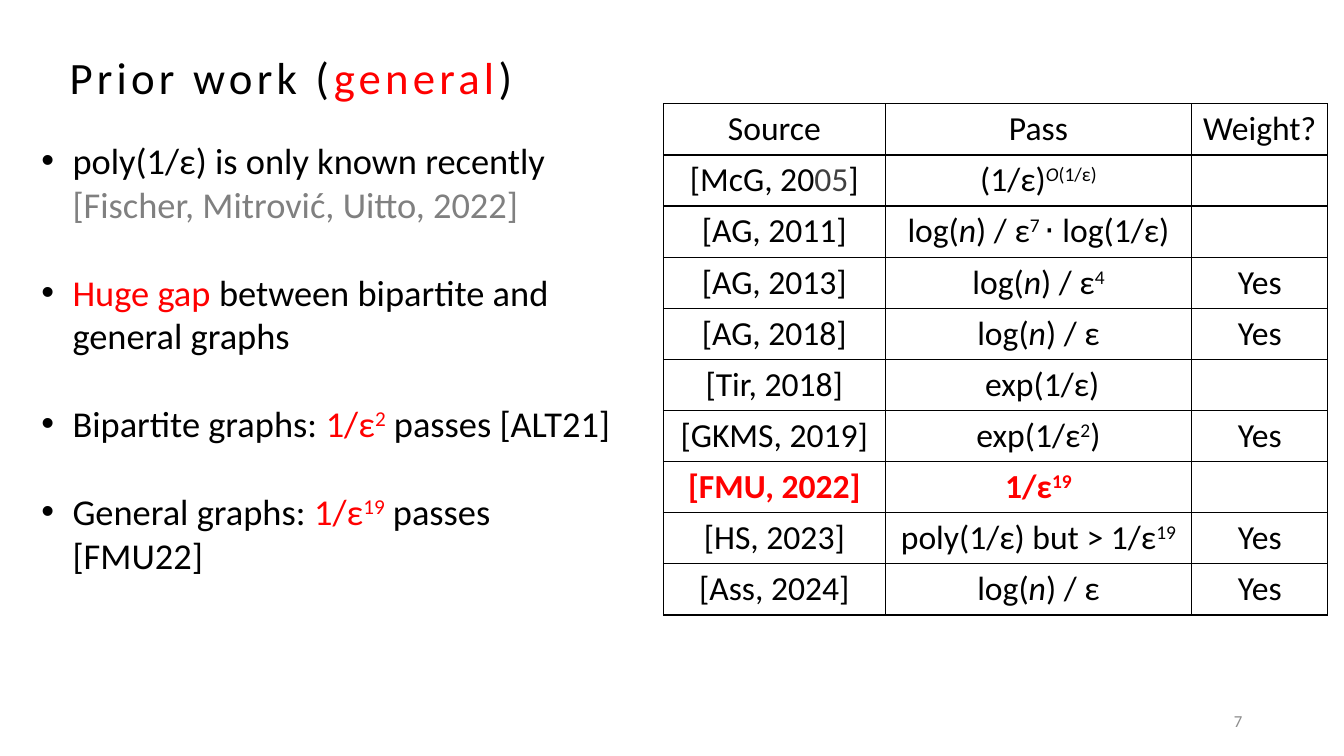
from pptx import Presentation
from pptx.dml.color import RGBColor as Color
from pptx.enum.text import MSO_ANCHOR as Anchor, MSO_AUTO_SIZE as Fit, PP_ALIGN as Align
from pptx.oxml import parse_xml
from pptx.oxml.ns import nsdecls
from pptx.util import Inches, Pt

THEME = {
    "font": "Calibri",
    "black": "000000", "red": "FF0000", "grey": "808080",
    "dark": "404040", "pale": "8C8C8C", "white": "FFFFFF",
    "title": 32, "body": 26, "table": 24, "number": 12,
}


def write(para, runs, size):
    for text, style in runs:
        words = style.split()
        colour = next((word for word in words if word in THEME), "black")
        span = para.add_run()
        span.text = text
        look = {"name": THEME["font"], "size": Pt(THEME[size]),
                "bold": "bold" in words, "italic": "italic" in words}
        for name, value in look.items():
            setattr(span.font, name, value)
        span.font.color.rgb = Color.from_string(THEME[colour])
        if "super" in words:
            span._r.get_or_add_rPr().set("baseline", "30000")


def place(box, left, top, width, height):
    frame = {"left": left, "top": top, "width": width, "height": height}
    for name, value in frame.items():
        setattr(box, name, Inches(value))


deck = Presentation()
deck.slide_width, deck.slide_height = Inches(13.33), Inches(7.5)
page = deck.slides.add_slide(deck.slide_layouts[1])

title = page.shapes.title
place(title, 0.59, 0.44, 4.71, 0.64)
title.text_frame.word_wrap = False
title.text_frame.auto_size = Fit.NONE
title.text_frame.vertical_anchor = Anchor.TOP
heading = title.text_frame.paragraphs[0]
heading.alignment = Align.LEFT
write(heading, [("Prior work (", ""), ("general", "red"), (")", "")], "title")
for span in heading.runs:
    span._r.get_or_add_rPr().set("spc", "300")

log_n = [("log(", ""), ("n", "italic"), (") / ε", "")]
yes = [("Yes", "")]
rows = [
    ([("Source", "")], [("Pass", "")], [("Weight?", "")]),
    ([("[McG, 20", ""), ("05", "dark"), ("]", "")],
     [("(1/ε)", ""), ("O", "italic super"), ("(1/ε)", "super")], []),
    ([("[AG, 2011]", "")], log_n + [("7 ", "super"), ("⋅ log(1/ε)", "")], []),
    ([("[AG, 2013]", "")], log_n + [("4", "super")], yes),
    ([("[AG, 2018]", "")], log_n, yes),
    ([("[Tir, 2018]", "")], [(" exp(1/ε)", "")], []),
    ([("[GKMS, 2019]", "")], [("exp(1/ε", ""), ("2", "super"), (")", "")], yes),
    ([("[FMU, 2022]", "red bold")],
     [("1/ε", "red bold"), ("19", "red bold super")], []),
    ([("[HS, 2023]", "")], [("poly(1/ε) but > 1/ε", ""), ("19", "super")], yes),
    ([("[Ass, 2024]", "")], log_n, yes),
]
widths = [2.2, 3.04, 1.35]
table = page.shapes.add_table(
    len(rows), len(widths), Inches(6.58), Inches(1.03),
    Inches(sum(widths)), Inches(0.5 * len(rows))).table
table.first_row = table.horz_banding = False
for column, width in zip(table.columns, widths):
    column.width = Inches(width)
for row_index, row in enumerate(rows):
    for column_index, runs in enumerate(row):
        cell = table.cell(row_index, column_index)
        borders = cell._tc.get_or_add_tcPr()
        for side in "LRTB":
            borders.append(parse_xml(
                f'<a:ln{side} {nsdecls("a")} w="{Pt(1)}"><a:solidFill>'
                f'<a:srgbClr val="{THEME["black"]}"/></a:solidFill></a:ln{side}>'))
        cell.fill.solid()
        cell.fill.fore_color.rgb = Color.from_string(THEME["white"])
        para = cell.text_frame.paragraphs[0]
        para.alignment = Align.CENTER
        write(para, runs, "table")

points = [
    [("poly(1/ε) is only known recently ", ""),
     ("[Fischer, Mitrović, Uitto, 2022]", "grey")],
    [("Huge gap ", "red"), ("between bipartite and general graphs", "")],
    [("Bipartite graphs: ", ""), ("1/ε", "red"), ("2", "red super"),
     (" passes [ALT21]", "")],
    [("General graphs: ", ""), ("1/ε", "red"), ("19", "red super"),
     (" passes [FMU22]", "")],
]
body = page.placeholders[1]
place(body, 0.31, 1.32, 6.03, 4.04)
body.text_frame.word_wrap = True
body.text_frame.auto_size = Fit.NONE
for index, runs in enumerate(points):
    para = body.text_frame.add_paragraph() if index else body.text_frame.paragraphs[0]
    spacing = {"line_spacing": 1.0, "space_after": Pt(0),
               "space_before": Pt(31.7 if index else 0)}
    for name, value in spacing.items():
        setattr(para, name, value)
    bullet = para._p.get_or_add_pPr()
    bullet.set("marL", str(Inches(0.31)))
    bullet.set("indent", str(-Inches(0.31)))
    for mark in (f'buClr {nsdecls("a")}><a:srgbClr val="{THEME["black"]}"/></a:buClr>',
                 f'buFont {nsdecls("a")} typeface="Arial"/>',
                 f'buChar {nsdecls("a")} char="•"/>'):
        bullet.append(parse_xml("<a:" + mark))
    write(para, runs, "body")

number = page.shapes.add_textbox(Inches(9.42), Inches(6.95), Inches(3), Inches(0.4))
number.text_frame.word_wrap = True
number.text_frame.vertical_anchor = Anchor.MIDDLE
number.text_frame.paragraphs[0].alignment = Align.RIGHT
write(number.text_frame.paragraphs[0], [("7", "pale")], "number")

deck.save("out.pptx")
